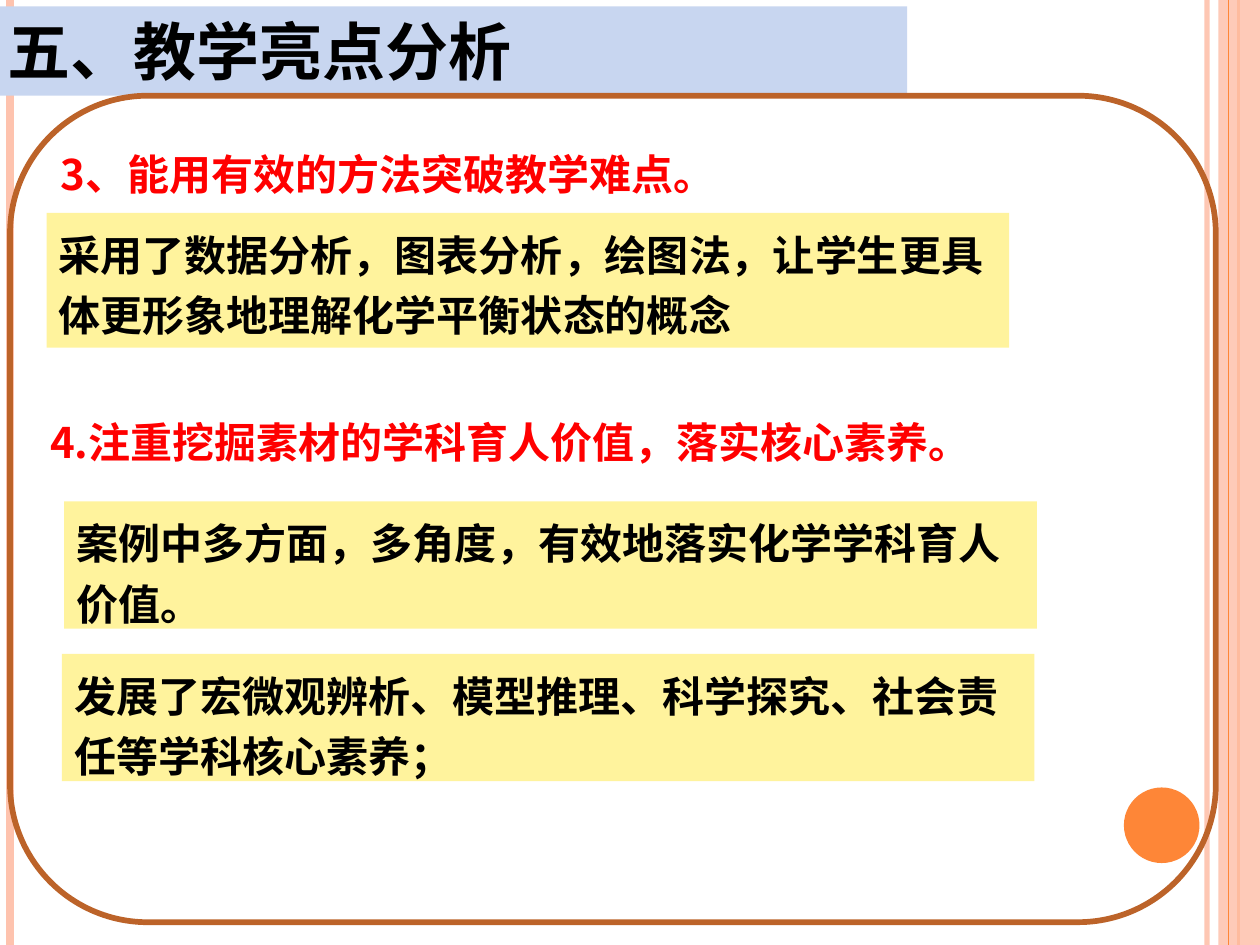
"""Build the slide on teaching highlights with its framed points and side rails."""
import pptx
import pptx.dml.color
import pptx.enum.shapes
import pptx.enum.text
import pptx.oxml
import pptx.oxml.ns
import pptx.util

Inches = pptx.util.Inches
Pt = pptx.util.Pt
SHAPES = pptx.enum.shapes.MSO_SHAPE

FONT = "Noto Sans CJK SC"
COLORS = {
    "peach": "FEC3AE", "orange": "FE8637", "blue": "C8D6F0", "brown": "BC6329",
    "yellow": "FFF39D", "red": "FF0000", "black": "000000",
}
RAILS_BEHIND = [(9.58, "peach", 3, 93), (0.08, "peach", 4.5, 100), (9.83, "orange", 1.5, 100)]
RAILS_FRONT = [(9.75, "orange", 0.75, 100)]
BAND = (9.67, 0, 0.33, 7.5)
DOT = (8.92, 6.25, 0.6, 0.6)
FRAME = (0.08, 0.76, 9.57, 6.56)
TITLE = ("五、教学亮点分析", (-0.04, 0.05, 7.24, 0.71))
POINTS = [
    ("3、能用有效的方法突破教学难点。", (0.38, 1.05, 9.12, 0.59), "red", None),
    ("采用了数据分析，图表分析，绘图法，让学生更具体更形象地理解化学平衡状态的概念",
     (0.37, 1.69, 7.64, 1.07), "black", "yellow"),
    ("4.注重挖掘素材的学科育人价值，落实核心素养。", (0.3, 3.18, 9.12, 0.52), "red", None),
    ("案例中多方面，多角度，有效地落实化学学科育人价值。",
     (0.51, 3.98, 7.72, 1.01), "black", "yellow"),
    ("发展了宏微观辨析、模型推理、科学探究、社会责任等学科核心素养；",
     (0.49, 5.19, 7.72, 1.01), "black", "yellow"),
]


def rgb(name):
    return pptx.dml.color.RGBColor.from_string(COLORS[name])


def add_element(parent, tag, **attributes):
    child = pptx.oxml.parse_xml(f"<a:{tag} {pptx.oxml.ns.nsdecls('a')}/>")
    for key, value in attributes.items():
        child.set(key, value)
    parent.append(child)


def paint(fill, color, opacity=100):
    fill.solid()
    fill.fore_color.rgb = rgb(color)
    if opacity < 100:
        for node in fill._xPr.iter(pptx.oxml.ns.qn("a:srgbClr")):
            add_element(node, "alpha", val=str(opacity * 1000))


def add_rail(page, x, color, width, opacity):
    rail = page.shapes.add_connector(
        pptx.enum.shapes.MSO_CONNECTOR.STRAIGHT, Inches(x), 0, Inches(x), Inches(7.5))
    rail.line.width = Pt(width)
    paint(rail.line.fill, color, opacity)
    add_element(rail._element.spPr, "effectLst")


def add_plain_shape(page, kind, place, color=None, opacity=100):
    shape = page.shapes.add_shape(kind, *map(Inches, place))
    shape.shadow.inherit = False
    shape.line.fill.background()
    if color:
        paint(shape.fill, color, opacity)
    else:
        shape.fill.background()
    return shape


def add_words(page, words, place, color, fill, size=24, spacing=1.2):
    if fill:
        box = add_plain_shape(page, SHAPES.RECTANGLE, place, fill)
    else:
        box = page.shapes.add_textbox(*map(Inches, place))
    frame = box.text_frame
    frame.word_wrap = True
    frame.vertical_anchor = pptx.enum.text.MSO_ANCHOR.TOP
    para = frame.paragraphs[0]
    para.text = words
    para.alignment = pptx.enum.text.PP_ALIGN.LEFT
    para.line_spacing = spacing
    font = para.font
    font.name, font.size, font.bold = FONT, Pt(size), True
    font.color.rgb = rgb(color)
    add_element(font._element, "ea", typeface=FONT)


def main():
    deck = pptx.Presentation()
    deck.slide_width, deck.slide_height = Inches(10), Inches(7.5)
    page = deck.slides.add_slide(deck.slide_layouts[6])

    for rail in RAILS_BEHIND:
        add_rail(page, *rail)
    add_plain_shape(page, SHAPES.RECTANGLE, BAND, "peach", 87)
    for rail in RAILS_FRONT:
        add_rail(page, *rail)
    add_plain_shape(page, SHAPES.OVAL, DOT, "orange")

    add_words(page, *TITLE, "black", "blue", size=36, spacing=1.0)
    border = add_plain_shape(page, SHAPES.ROUNDED_RECTANGLE, FRAME)
    border.line.width = Pt(3.25)
    paint(border.line.fill, "brown")
    for point in POINTS:
        add_words(page, *point)

    deck.save("out.pptx")


if __name__ == "__main__":
    main()
